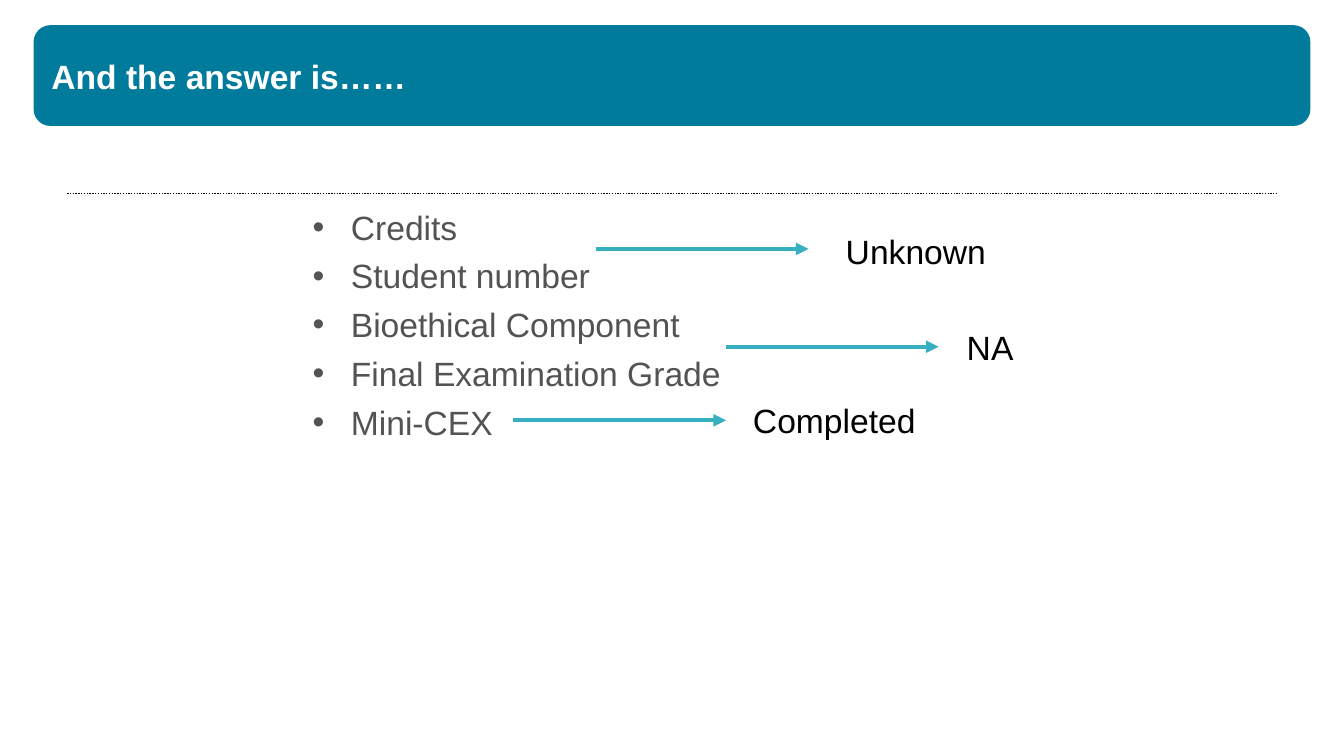
"""Build the slide that pairs course items with their answers."""
from lxml.etree import SubElement
from pptx import Presentation
from pptx.dml.color import RGBColor
from pptx.enum.dml import MSO_LINE
from pptx.enum.shapes import MSO_CONNECTOR as Connector, MSO_SHAPE as Shape
from pptx.enum.text import MSO_ANCHOR as Anchor, MSO_AUTO_SIZE as AutoSize, PP_ALIGN as Align
from pptx.oxml.ns import qn
from pptx.util import Inches, Pt

TITLE = "And the answer is……"
ITEMS = ["Credits", "Student number", "Bioethical Component", "Final Examination Grade", "Mini-CEX"]
ANSWERS = [
    ("Unknown", (5.91, 2.47), (8.29, 2.24)),
    ("NA", (7.2, 3.44), (9.49, 3.19)),
    ("Completed", (5.09, 4.17), (7.37, 3.92)),
]
WIDTH, HEIGHT = 13.33, 7.5
MARGIN = WIDTH / 40
ARROW_LENGTH = 2.11
ANSWER_SIZE = (3.2, 0.5)
INDENT = 0.38
TEAL, AQUA, GREY, WHITE, BLACK = "007B9B", "36AFC1", "525353", "FFFFFF", "000000"
FONT = {"name": "Arial", "size": Pt(24), "bold": False}


def color(value):
    return RGBColor.from_string(value)


def inches(*lengths):
    return [Inches(length) for length in lengths]


def write(shape, lines, text_color, **changes):
    frame = shape.text_frame
    frame.word_wrap = True
    frame.vertical_anchor = Anchor.TOP
    frame.text = "\n".join(lines)
    for paragraph in frame.paragraphs:
        paragraph.alignment = Align.LEFT
        for name, value in {**FONT, **changes}.items():
            setattr(paragraph.font, name, value)
        paragraph.font.color.rgb = color(text_color)


def place(shape, *box):
    for name, length in zip(("left", "top", "width", "height"), inches(*box)):
        setattr(shape, name, length)


def add_line(slide, start, end, line_color, width):
    connector = slide.shapes.add_connector(Connector.STRAIGHT, *inches(*start, *end))
    connector.line.color.rgb = color(line_color)
    connector.line.width = Pt(width)
    SubElement(connector.element.spPr, qn("a:effectLst"))
    return connector


def add_banner(slide):
    banner = slide.shapes.add_shape(
        Shape.ROUNDED_RECTANGLE, *inches(MARGIN, 0.25, WIDTH - 2 * MARGIN, 1))
    banner.shadow.inherit = False
    banner.fill.solid()
    banner.fill.fore_color.rgb = color(TEAL)
    banner.line.fill.background()
    return banner


def add_items(body):
    place(body, 3, 2, 9.67, 4.5)
    body.text_frame.auto_size = AutoSize.NONE
    body.text_frame.text = "\n".join(ITEMS)
    write(body, ITEMS, GREY)
    for index, paragraph in enumerate(body.text_frame.paragraphs):
        paragraph.space_before = Pt(6 if index else 0)
        properties = paragraph._p.get_or_add_pPr()
        properties.set("marL", str(Inches(INDENT)))
        properties.set("indent", str(-Inches(INDENT)))
        SubElement(properties, qn("a:buFont")).set("typeface", "Arial")
        SubElement(properties, qn("a:buChar")).set("char", "•")
        properties.append(properties.find(qn("a:defRPr")))


def add_answer(slide, answer, start, corner):
    arrow = add_line(slide, start, (start[0] + ARROW_LENGTH, start[1]), AQUA, 3)
    SubElement(arrow.line._get_or_add_ln(), qn("a:tailEnd")).set("type", "triangle")
    label = slide.shapes.add_textbox(*inches(*corner, *ANSWER_SIZE))
    write(label, [answer], BLACK)
    label.text_frame.auto_size = AutoSize.SHAPE_TO_FIT_TEXT


def main():
    presentation = Presentation()
    presentation.slide_width, presentation.slide_height = inches(WIDTH, HEIGHT)
    slide = presentation.slides.add_slide(presentation.slide_layouts[1])
    title, body = slide.placeholders

    banner = add_banner(slide)
    rule = add_line(slide, (2 * MARGIN, 1.92), (WIDTH - 2 * MARGIN, 1.92), BLACK, 1)
    rule.line.dash_style = MSO_LINE.ROUND_DOT
    for backdrop in (banner, rule):
        title.element.addprevious(backdrop.element)

    place(title, 0.41, 0.5, 12.33, 1.33)
    write(title, [TITLE], WHITE, bold=True)
    add_items(body)
    for answer, start, corner in ANSWERS:
        add_answer(slide, answer, start, corner)
    presentation.save("out.pptx")


if __name__ == "__main__":
    main()
